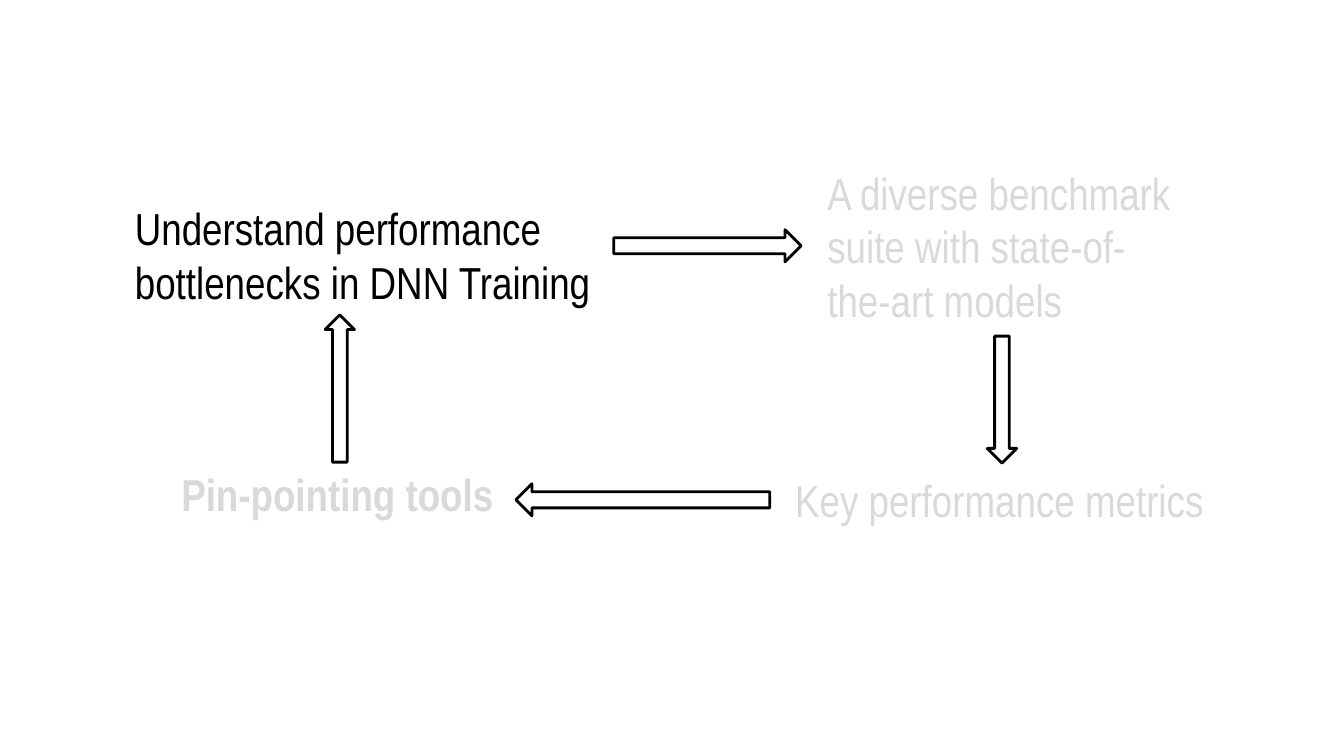
"""Build a slide with a four-step cycle of DNN training analysis."""
from pptx import Presentation
from pptx.dml.color import RGBColor
from pptx.enum.shapes import MSO_SHAPE
from pptx.util import Cm, Pt

ARROW = MSO_SHAPE.RIGHT_ARROW
FONT = "Arial Narrow"
COLORS = {"active": "000000", "faded": "D9D9D9", "fill": "FFFFFF", "line": "000000"}

STEPS = [
    ("Understand performance bottlenecks in DNN Training",
     (3.15, 4.93, 12.07, 3.0), {"color": "active"}),
    ("A diverse benchmark suite with state-of-the-art models",
     (20.6, 4.04, 9.3, 4.37), {}),
    ("Key performance metrics", (19.79, 11.79, 10.92, 1.63), {}),
    ("Pin-pointing tools", (4.32, 11.63, 8.53, 1.63), {"bold": True}),
]
ARROWS = [
    (15.47, 5.79, 4.72, 0.81),
    (23.65, 9.7, 3.2, 0.74),
    (13.0, 12.19, 6.4, 0.81),
    (6.71, 9.42, 3.71, 0.74),
]
TURN = 360 / len(ARROWS)


def tint(name):
    return RGBColor.from_string(COLORS[name])


def add_text(slide, text, box, size=32, color="faded", bold=False):
    frame = slide.shapes.add_textbox(*map(Cm, box)).text_frame
    frame.word_wrap = True
    run = frame.paragraphs[0].add_run()
    run.text = text
    run.font.name = FONT
    run.font.size = Pt(size)
    run.font.bold = bold
    run.font.color.rgb = tint(color)


def add_arrow(slide, box, angle):
    arrow = slide.shapes.add_shape(ARROW, *map(Cm, box))
    arrow.rotation = angle
    arrow.shadow.inherit = False
    arrow.fill.solid()
    arrow.fill.fore_color.rgb = tint("fill")
    arrow.line.color.rgb = tint("line")
    arrow.line.width = Pt(2)


def main():
    deck = Presentation()
    deck.slide_width, deck.slide_height = Cm(33.87), Cm(19.05)
    slide = deck.slides.add_slide(deck.slide_layouts[6])
    for text, box, style in STEPS:
        add_text(slide, text, box, **style)
    for index, box in enumerate(ARROWS):
        add_arrow(slide, box, index * TURN)
    deck.save("out.pptx")


if __name__ == "__main__":
    main()
